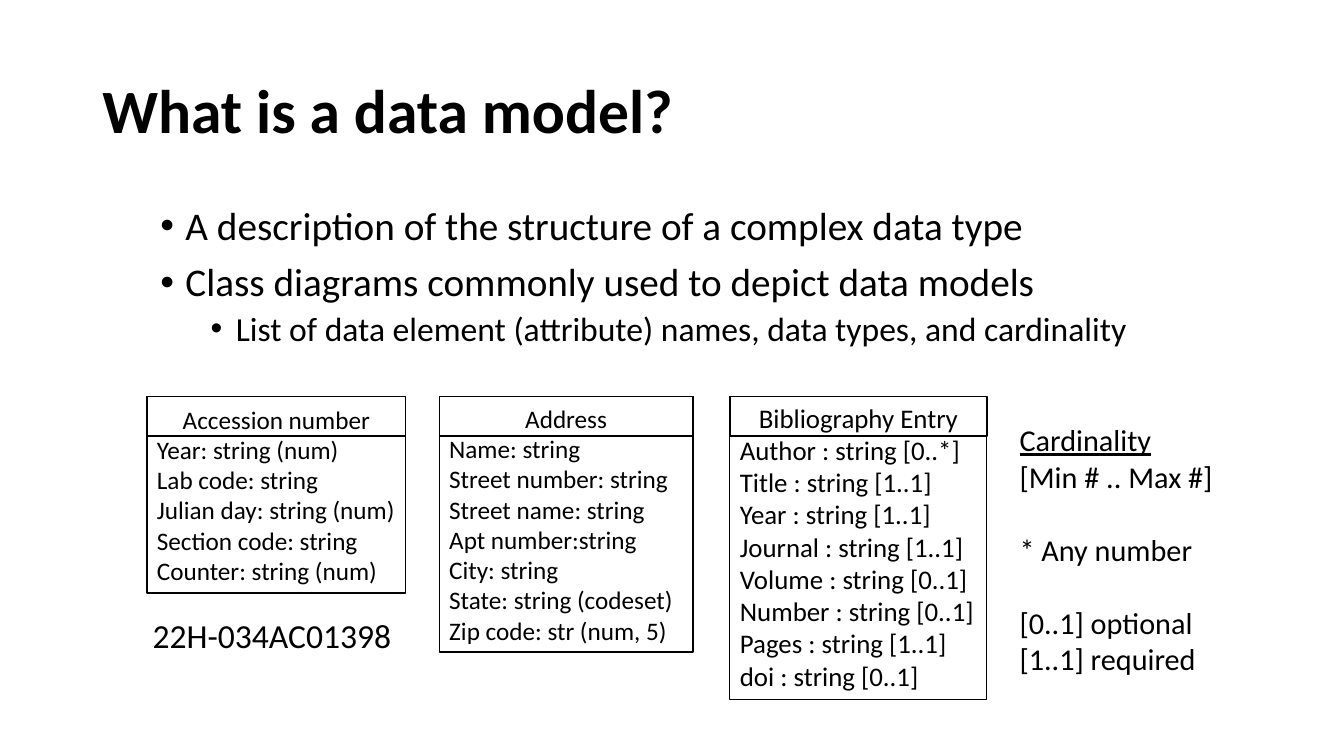
import lxml.etree
import pptx
import pptx.dml.color
import pptx.enum.shapes
import pptx.enum.text
import pptx.oxml.ns
import pptx.util

# The slide is a grid of 160 columns by 90 rows with square cells.
CELL = pptx.util.Inches(1) / 12
COLUMNS, ROWS = 160, 90
FONT = "Calibri"
BLACK, WHITE = "000000", "FFFFFF"
ANCHOR = pptx.enum.text.MSO_ANCHOR
ALIGN = pptx.enum.text.PP_ALIGN

CLASS_TOP, HEADER_ROWS = 47.2, 4.7
ACCESSION_BOX = (17.5, CLASS_TOP, 30.8, 23.4)
ADDRESS_BOX = (52.3, CLASS_TOP, 30.2, 30.4)
BIBLIOGRAPHY_BOX = (86.9, CLASS_TOP, 30.6, 36.1)


def color(hex_string):
    return pptx.dml.color.RGBColor.from_string(hex_string)


def place(box):
    """Turn a box in grid cells into slide lengths."""
    return [round(cells * CELL) for cells in box]


def add_bullet(paragraph, indent):
    properties = paragraph._p.get_or_add_pPr()
    properties.set("marL", str(pptx.util.Inches(indent)))
    properties.set("indent", str(-pptx.util.Inches(0.25)))
    tag = pptx.oxml.ns.qn
    lxml.etree.SubElement(properties, tag("a:buFont")).set("typeface", "Arial")
    lxml.etree.SubElement(properties, tag("a:buChar")).set("char", "•")


def add_paragraph(frame, text, size=18, bold=False, underline=False,
                  align=ALIGN.LEFT, before=0, spacing=None, bullet_indent=None):
    """Write into the empty first paragraph, or append a new one."""
    paragraph = frame.paragraphs[0] if not frame.text else frame.add_paragraph()
    if bullet_indent is not None:
        add_bullet(paragraph, bullet_indent)
    paragraph.alignment = align
    paragraph.space_before = pptx.util.Pt(before)
    if spacing:
        paragraph.line_spacing = spacing
    run = paragraph.add_run()
    run.text = text
    run.font.name = FONT
    run.font.size = pptx.util.Pt(size)
    run.font.bold = bold
    run.font.underline = underline
    run.font.color.rgb = color(BLACK)


def add_text_frame(slide, box, anchor=ANCHOR.TOP, wrap=True):
    frame = slide.shapes.add_textbox(*place(box)).text_frame
    frame.word_wrap = wrap
    frame.vertical_anchor = anchor
    return frame


def add_rectangle(slide, box, fill=None, line_width=1):
    shape = slide.shapes.add_shape(
        pptx.enum.shapes.MSO_SHAPE.RECTANGLE, *place(box))
    shape.shadow.inherit = False
    if fill:
        shape.fill.solid()
        shape.fill.fore_color.rgb = color(fill)
    else:
        shape.fill.background()
    shape.line.color.rgb = color(BLACK)
    shape.line.width = pptx.util.Pt(line_width)
    return shape


def add_title(slide, box):
    frame = add_text_frame(slide, box, anchor=ANCHOR.MIDDLE)
    add_paragraph(frame, "What is a data model?", size=44, bold=True, spacing=0.9)


def add_bullets(slide, box):
    frame = add_text_frame(slide, box)
    add_paragraph(frame, "A description of the structure of a complex data type",
                  size=28, spacing=0.9, bullet_indent=0.25)
    add_paragraph(frame, "Class diagrams commonly used to depict data models",
                  size=28, spacing=0.9, before=10, bullet_indent=0.25)
    add_paragraph(
        frame, "List of data element (attribute) names, data types, and cardinality",
        size=24, spacing=0.9, before=5, bullet_indent=0.75)


def add_class(slide, box, name, attributes, size=18, fill=WHITE,
              anchor=ANCHOR.MIDDLE, line_width=1, wrap=True):
    """Draw a class: a frame with its name and attributes, and a header outline."""
    left, top, width, height = box
    frame = add_rectangle(slide, box, fill, line_width).text_frame
    frame.word_wrap = wrap
    frame.vertical_anchor = anchor
    add_paragraph(frame, name, size=size, align=ALIGN.CENTER)
    for attribute in attributes:
        add_paragraph(frame, attribute, size=size)
    add_rectangle(slide, (left, top, width, HEADER_ROWS))


def add_sample(slide, box):
    frame = add_text_frame(slide, box, wrap=False)
    add_paragraph(frame, "22H-034AC01398", size=24)


def add_legend(slide, box):
    size, group_gap = 21.6, 26.4
    frame = add_text_frame(slide, box, wrap=False)
    add_paragraph(frame, "Cardinality", size=size, underline=True)
    add_paragraph(frame, "[Min # .. Max #]", size=size)
    add_paragraph(frame, "* Any number", size=size, before=group_gap)
    add_paragraph(frame, "[0..1] optional", size=size, before=group_gap)
    add_paragraph(frame, "[1..1] required", size=size)


def add_data_model_slide(presentation):
    slide = presentation.slides.add_slide(presentation.slide_layouts[6])
    add_title(slide, (11, 4.8, 138, 17.4))
    add_bullets(slide, (17.9, 24, 124.2, 19))
    add_class(slide, BIBLIOGRAPHY_BOX, "Bibliography Entry", [
        "Author : string [0..*]", "Title : string [1..1]",
        "Year : string [1..1]", "Journal : string [1..1]",
        "Volume : string [0..1]", "Number : string [0..1]",
        "Pages : string [1..1]", "doi : string [0..1]",
    ], size=19.2, fill=None, anchor=ANCHOR.TOP, line_width=0.75, wrap=False)
    add_legend(slide, (120.2, 49.6, 25.7, 31.8))
    add_class(slide, ADDRESS_BOX, "Address", [
        "Name: string", "Street number: string", "Street name: string",
        "Apt number:string", "City: string", "State: string (codeset)",
        "Zip code: str (num, 5)",
    ])
    add_class(slide, ACCESSION_BOX, "Accession number", [
        "Year: string (num)", "Lab code: string", "Julian day: string (num)",
        "Section code: string", "Counter: string (num)",
    ])
    left, top, width, height = ACCESSION_BOX
    add_sample(slide, (left - 0.5, top + height + 2, width + 0.3, 6))


def main():
    presentation = pptx.Presentation()
    presentation.slide_width = round(COLUMNS * CELL)
    presentation.slide_height = round(ROWS * CELL)
    add_data_model_slide(presentation)
    presentation.save("out.pptx")


if __name__ == "__main__":
    main()
